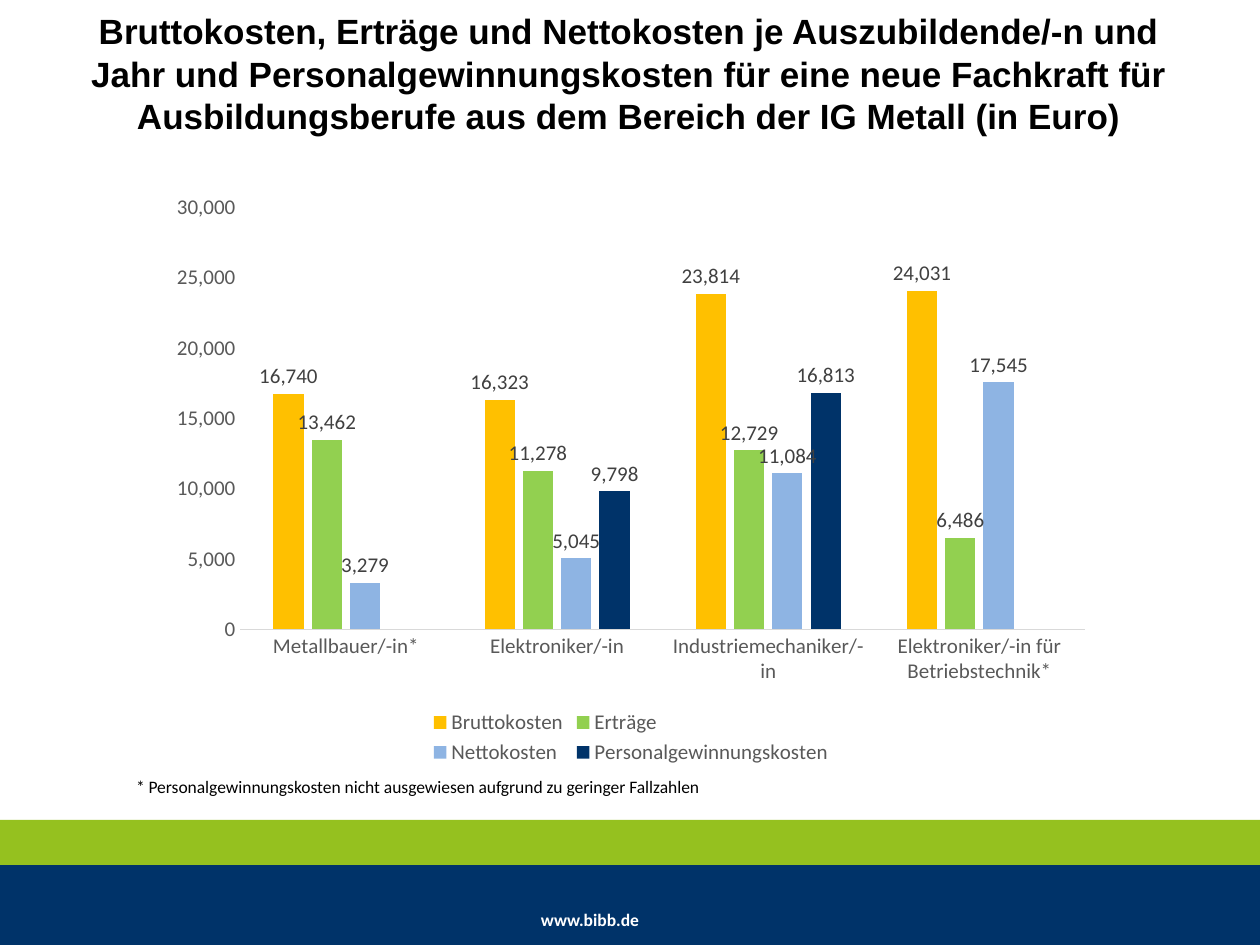
from typing import NamedTuple, Optional

from pptx import Presentation
from pptx.chart.data import CategoryChartData
from pptx.dml.color import RGBColor
from pptx.enum.chart import (XL_CHART_TYPE, XL_LABEL_POSITION,
                             XL_LEGEND_POSITION, XL_TICK_MARK)
from pptx.enum.shapes import MSO_SHAPE
from pptx.enum.text import PP_ALIGN
from pptx.util import Pt

EMU_PER_PX = 914400 / 126
COLUMNS = XL_CHART_TYPE.COLUMN_CLUSTERED
RECTANGLE = MSO_SHAPE.RECTANGLE
LEFT, CENTER = PP_ALIGN.LEFT, PP_ALIGN.CENTER
NO_TICKS = XL_TICK_MARK.NONE
OUTSIDE_END = XL_LABEL_POSITION.OUTSIDE_END
BOTTOM = XL_LEGEND_POSITION.BOTTOM

BLACK, WHITE, NAVY, GREEN = "000000", "FFFFFF", "003369", "95C11F"
AXIS_GREY, LABEL_GREY, LINE_GREY = "595959", "404040", "D9D9D9"
THOUSANDS = "#,##0"


class Box(NamedTuple):
    left: int
    top: int
    width: int
    height: int


class Band(NamedTuple):
    box: Box
    color: str


class Caption(NamedTuple):
    text: str
    box: Box
    size: int
    font: str
    color: str
    bold: bool = False
    align: PP_ALIGN = LEFT
    wrap: bool = True
    margins: tuple[int, int] = (13, 6)


class CostSeries(NamedTuple):
    name: str
    euros: tuple[Optional[int], ...]
    color: str


BANDS = [
    Band(Box(0, 865, 1260, 80), NAVY),
    Band(Box(0, 820, 1260, 45), GREEN),
]
WEB_ADDRESS = Caption("www.bibb.de", Box(541, 909, 128, 21), 10, "Calibri",
                      WHITE, bold=True, margins=(0, 0))
TITLE = Caption(
    "Bruttokosten, Erträge und Nettokosten je Auszubildende/-n und Jahr und "
    "Personalgewinnungskosten für eine neue Fachkraft für Ausbildungsberufe "
    "aus dem Bereich der IG Metall (in Euro)",
    Box(59, 4, 1140, 140), 20, "Arial", BLACK, bold=True, align=CENTER)
FOOTNOTE = Caption(
    "* Personalgewinnungskosten nicht ausgewiesen aufgrund zu geringer Fallzahlen",
    Box(123, 770, 600, 34), 10, "Calibri", BLACK, wrap=False)

CHART_BOX = Box(158, 183, 946, 587)
OCCUPATIONS = ["Metallbauer/-in*", "Elektroniker/-in", "Industriemechaniker/-in",
               "Elektroniker/-in für Betriebstechnik*"]
COSTS = [
    CostSeries("Bruttokosten", (16740, 16323, 23814, 24031), "FFC000"),
    CostSeries("Erträge", (13462, 11278, 12729, 6486), "92D050"),
    CostSeries("Nettokosten", (3279, 5045, 11084, 17545), "8EB4E3"),
    CostSeries("Personalgewinnungskosten", (None, 9798, 16813, None), NAVY),
]


def px(length: int) -> int:
    return round(length * EMU_PER_PX)


def rgb(color: str) -> RGBColor:
    return RGBColor.from_string(color)


def set_font(font, size: int, color: str, name: str = "Calibri", bold: bool = False) -> None:
    font.size, font.name, font.bold = Pt(size), name, bold
    font.color.rgb = rgb(color)


def draw_band(slide, band: Band) -> None:
    stripe = slide.shapes.add_shape(RECTANGLE, *map(px, band.box))
    stripe.shadow.inherit = False
    stripe.fill.solid()
    stripe.fill.fore_color.rgb = rgb(band.color)
    stripe.line.fill.background()


def draw_caption(slide, caption: Caption) -> None:
    frame = slide.shapes.add_textbox(*map(px, caption.box)).text_frame
    frame.word_wrap = caption.wrap
    side, edge = map(px, caption.margins)
    frame.margin_left = frame.margin_right = side
    frame.margin_top = frame.margin_bottom = edge
    paragraph = frame.paragraphs[0]
    paragraph.text = caption.text
    paragraph.alignment = caption.align
    set_font(paragraph.font, caption.size, caption.color, caption.font, caption.bold)


def style_axes(chart) -> None:
    for axis in (chart.category_axis, chart.value_axis):
        axis.major_tick_mark = axis.minor_tick_mark = NO_TICKS
        axis.has_major_gridlines = False
        set_font(axis.tick_labels.font, 12, AXIS_GREY)
    baseline = chart.category_axis.format.line
    baseline.color.rgb = rgb(LINE_GREY)
    baseline.width = Pt(0.75)
    euros = chart.value_axis
    euros.format.line.fill.background()
    euros.minimum_scale, euros.maximum_scale, euros.major_unit = 0, 30000, 5000
    euros.tick_labels.number_format = THOUSANDS
    euros.tick_labels.number_format_is_linked = False


def style_series(series, color: str) -> None:
    series.invert_if_negative = False
    series.format.fill.solid()
    series.format.fill.fore_color.rgb = rgb(color)
    labels = series.data_labels
    labels.show_value = True
    labels.position = OUTSIDE_END
    labels.number_format = THOUSANDS
    labels.number_format_is_linked = False
    set_font(labels.font, 12, LABEL_GREY)


def draw_cost_chart(slide) -> None:
    data = CategoryChartData(number_format=THOUSANDS)
    data.categories = OCCUPATIONS
    for cost in COSTS:
        data.add_series(cost.name, cost.euros)
    chart = slide.shapes.add_chart(COLUMNS, *map(px, CHART_BOX), data).chart
    set_font(chart.font, 10, BLACK)
    chart.has_title = False
    chart.has_legend = True
    chart.legend.position = BOTTOM
    chart.legend.include_in_layout = False
    set_font(chart.legend.font, 12, AXIS_GREY)
    style_axes(chart)
    plot = chart.plots[0]
    plot.vary_by_categories = False
    plot.gap_width, plot.overlap = 219, -27
    for series, cost in zip(plot.series, COSTS):
        style_series(series, cost.color)


def main() -> None:
    presentation = Presentation()
    presentation.slide_width, presentation.slide_height = px(1260), px(945)
    slide = presentation.slides.add_slide(presentation.slide_layouts[6])
    for band in BANDS:
        draw_band(slide, band)
    draw_caption(slide, WEB_ADDRESS)
    draw_cost_chart(slide)
    draw_caption(slide, TITLE)
    draw_caption(slide, FOOTNOTE)
    presentation.save("out.pptx")


if __name__ == "__main__":
    main()
